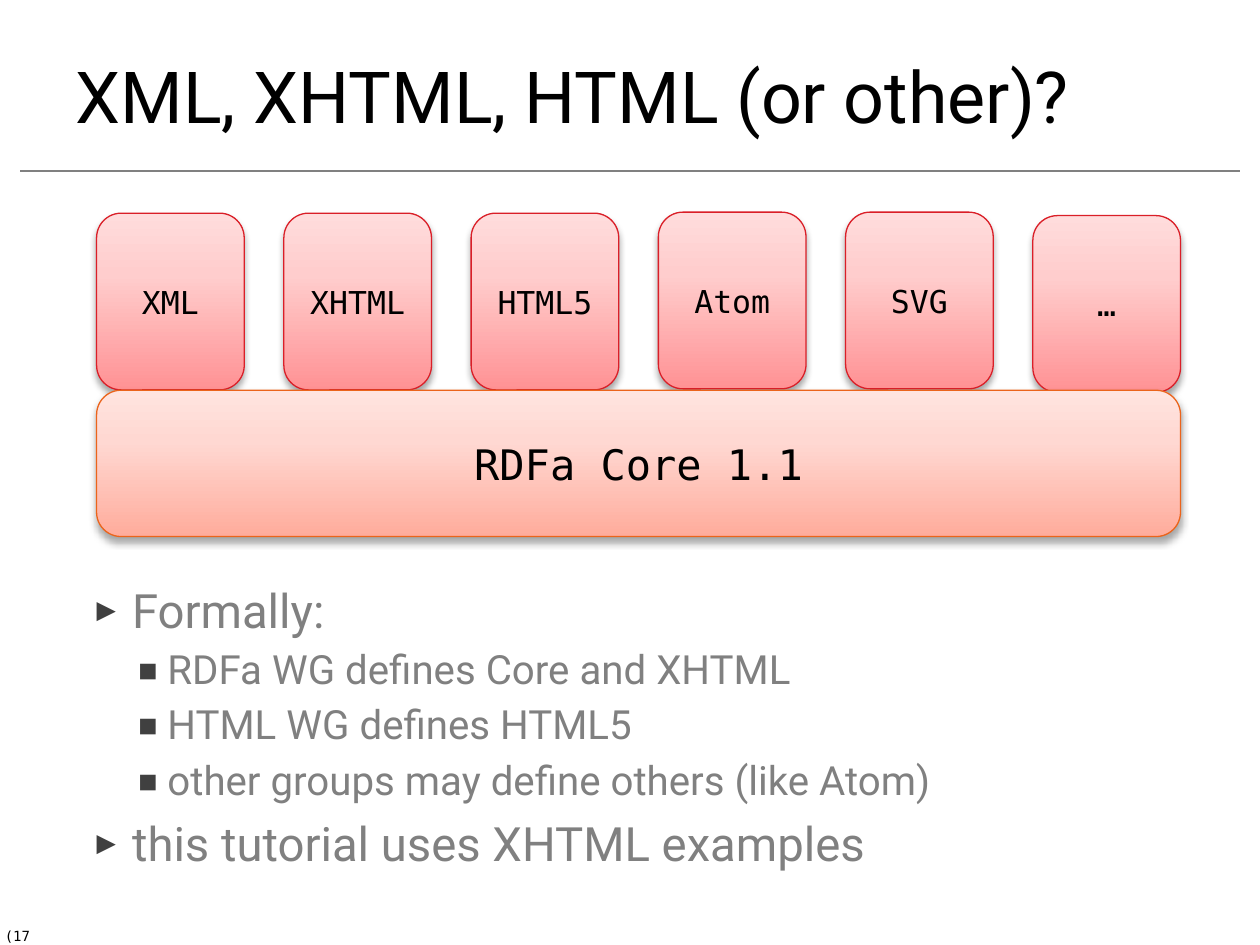
import pptx
import pptx.util
import pptx.dml.color
import pptx.enum.shapes
import pptx.enum.text
import pptx.oxml
import pptx.oxml.ns

Pt = pptx.util.Pt
ALIGN = pptx.enum.text.PP_ALIGN
ANCHOR = pptx.enum.text.MSO_ANCHOR
NAMESPACE = pptx.oxml.ns.nsdecls("a")
MONO, SANS = "DejaVu Sans Mono", "Roboto"
BLACK, GRAY, DARK = "000000", "808080", "404040"
RED = (("FF9294", "FFCDCD", "FFDCDC"), "DA1F28")
ORANGE = (("FFAC9C", "FFD8D2", "FFE4DF"), "EB641B")


def color(value):
    return pptx.dml.color.RGBColor.from_string(value)


def add_run(para, text, font, size, ink):
    span = para.add_run()
    span.text = text
    span.font.name = font
    span.font.size = Pt(size)
    span.font.color.rgb = color(ink)


def add_title(page, text):
    title = page.shapes.title
    title.left, title.top, title.width, title.height = Pt(36), Pt(18), Pt(648), Pt(72)
    title.text_frame.vertical_anchor = ANCHOR.MIDDLE
    para = title.text_frame.paragraphs[0]
    para.alignment = ALIGN.LEFT
    add_run(para, text, SANS, 41, BLACK)


def add_rule(page, left, right, top):
    rule = page.shapes.add_connector(
        pptx.enum.shapes.MSO_CONNECTOR.STRAIGHT, Pt(left), Pt(top), Pt(right), Pt(top))
    rule.line.color.rgb = color(GRAY)
    rule.line.width = Pt(1)
    rule._element.spPr.append(pptx.oxml.parse_xml(f"<a:effectLst {NAMESPACE}/>"))


def add_block(page, text, left, top, width, height, style, size):
    """Rounded block with an upward gradient and a soft shadow below."""
    stops, outline = style
    block = page.shapes.add_shape(
        pptx.enum.shapes.MSO_SHAPE.ROUNDED_RECTANGLE,
        Pt(left), Pt(top), Pt(width), Pt(height))
    block.line.color.rgb = color(outline)
    block.line.width = Pt(0.75)
    block.shadow.inherit = False

    # Three-stop gradient
    block.fill.gradient()
    block.fill.gradient_angle = 90
    stop_list = block._element.spPr.find(".//" + pptx.oxml.ns.qn("a:gsLst"))
    stop_list.clear()
    for percent, value in zip((0, 65, 100), stops):
        stop_list.append(pptx.oxml.parse_xml(
            f'<a:gs {NAMESPACE} pos="{percent * 1000}"><a:srgbClr val="{value}"/></a:gs>'))

    # Shadow
    effects = block._element.spPr.find(pptx.oxml.ns.qn("a:effectLst"))
    effects.append(pptx.oxml.parse_xml(
        f'<a:outerShdw {NAMESPACE} blurRad="{Pt(4)}" dist="{Pt(3)}" dir="5400000" '
        f'rotWithShape="0"><a:srgbClr val="{BLACK}"><a:alpha val="35000"/>'
        '</a:srgbClr></a:outerShdw>'))

    block.text_frame.vertical_anchor = ANCHOR.MIDDLE
    para = block.text_frame.paragraphs[0]
    para.alignment = ALIGN.CENTER
    add_run(para, text, MONO, size, BLACK)


def set_bullet(para, level, mark, percent, margin, indent):
    props = para._p.get_or_add_pPr()
    props.set("marL", str(Pt(margin)))
    props.set("indent", str(Pt(indent)))
    para.level = level
    for tag, attribute, value in (("buSzPct", "val", percent * 1000),
                                  ("buFont", "typeface", MONO),
                                  ("buChar", "char", mark)):
        props.append(pptx.oxml.parse_xml(f'<a:{tag} {NAMESPACE} {attribute}="{value}"/>'))
    props.insert(0, pptx.oxml.parse_xml(
        f'<a:buClr {NAMESPACE}><a:srgbClr val="{DARK}"/></a:buClr>'))


def add_bullets(page, items, left, top, width, height):
    # level: (mark, mark size, margin, indent, text size, space before)
    levels = (("▶", 68, 28.8, -20.2, 27, 6), ("▪", 100, 49, -18, 23, 4))
    box = page.shapes.add_textbox(Pt(left), Pt(top), Pt(width), Pt(height))
    frame = box.text_frame
    frame.word_wrap = True
    for index, (level, text) in enumerate(items):
        para = frame.add_paragraph() if index else frame.paragraphs[0]
        mark, percent, margin, indent, size, space = levels[level]
        set_bullet(para, level, mark, percent, margin, indent)
        para.space_before = Pt(space if index else 0)
        add_run(para, text, SANS, size, GRAY)


def add_page_number(page, text):
    box = page.shapes.add_textbox(Pt(-4.3), Pt(526.3), Pt(28.8), Pt(16.6))
    box.text_frame.word_wrap = False
    add_run(box.text_frame.paragraphs[0], text, MONO, 8, BLACK)


def main():
    deck = pptx.Presentation()
    deck.slide_width, deck.slide_height = Pt(720), Pt(540)
    page = deck.slides.add_slide(deck.slide_layouts[5])

    # Heading and page number
    add_page_number(page, "(17)")
    add_rule(page, 11.5, 708.5, 97.9)
    add_title(page, "XML, XHTML, HTML (or other)?")

    # Host languages standing on the core
    left, step = 55.2, 107
    languages = (("XML", 121.8), ("XHTML", 121.8), ("HTML5", 121.8),
                 ("Atom", 121.2), ("SVG", 121.2), ("…", 123.2))
    for column, (name, top) in enumerate(languages):
        add_block(page, name, left + column * step, top, 84.4, 101, RED, 18)
    add_block(page, "RDFa Core 1.1", left, 223, 619.4, 83.6, ORANGE, 24)

    # Explanation
    add_bullets(page, (
        (0, "Formally:"),
        (1, "RDFa WG defines Core and XHTML"),
        (1, "HTML WG defines HTML5"),
        (1, "other groups may define others (like Atom)"),
        (0, "this tutorial uses XHTML examples"),
    ), 39.6, 328.3, 648, 185.8)

    deck.save("out.pptx")


if __name__ == "__main__":
    main()
